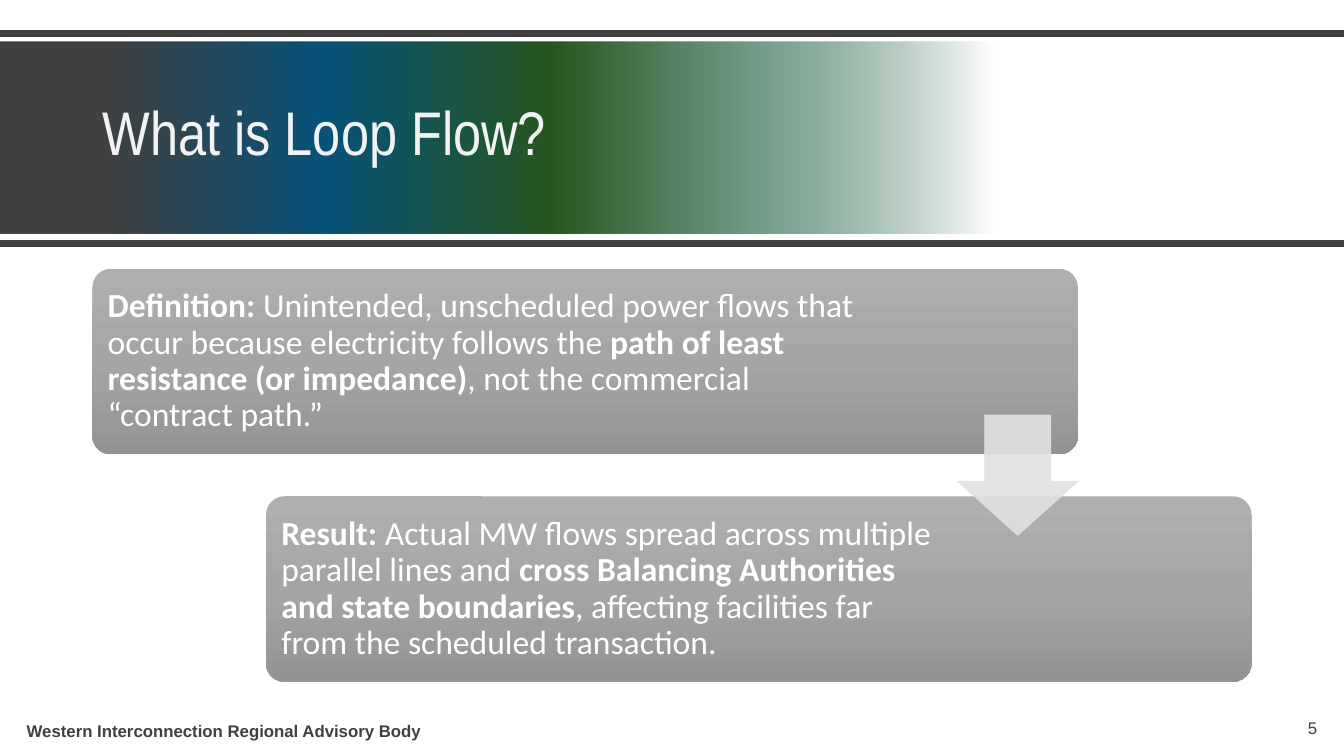
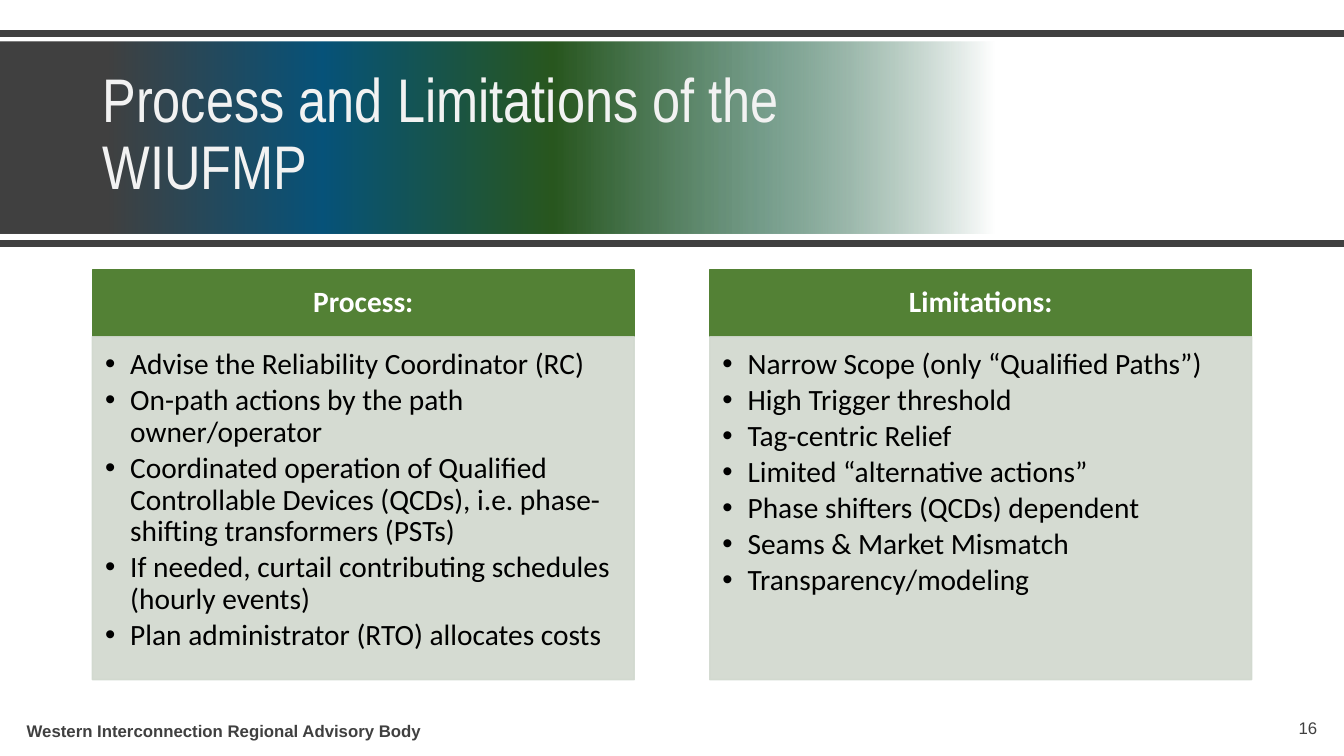
from lxml.etree import SubElement as Sub
from pptx import Presentation
from pptx.dml.color import RGBColor as RGB
from pptx.enum.shapes import MSO_CONNECTOR as Link, MSO_SHAPE as Form
from pptx.enum.text import MSO_ANCHOR as Anchor, PP_ALIGN as Align
from pptx.oxml.ns import qn
from pptx.util import Pt

COLORS = {
    "dark": "404040", "blue": "065279", "forest": "28561E", "sage": "3B735A",
    "white": "FFFFFF", "title": "F2F2F2", "black": "000000",
    "light": "AFAFAF", "mid": "A5A5A5", "deep": "939393", "arrow": "E1E1E1",
    "head": "538135", "panel": "D1D8CE",
}
WIDTH, HEIGHT, EDGE = 960, 540, 66
BAND = [(8, "dark", 100), (24, "blue", 100), (41, "forest", 100),
        (57, "sage", 69), (74, "white", 95)]
CARD = [(0, "light", 100), (50, "mid", 100), (100, "deep", 100)]
FOOTER = "Western Interconnection Regional Advisory Body"


def color(name):
    return RGB.from_string(COLORS[name])


def fade(shape, alpha):
    """Make the plain fill and line colours see-through, alpha in percent."""
    for node in shape.element.spPr.iter(qn("a:srgbClr")):
        Sub(node, qn("a:alpha")).set("val", str(alpha * 1000))


def blend(shape, stops, angle):
    """Fill with a gradient; stops are (place, colour, alpha) in percent."""
    shape.fill.gradient()
    grad = shape.element.spPr.find(qn("a:gradFill"))
    grad.find(qn("a:lin")).set("ang", str(angle * 60000))
    places = grad.find(qn("a:gsLst"))
    for old in list(places):
        places.remove(old)
    for place, name, alpha in stops:
        stop = Sub(places, qn("a:gs"))
        stop.set("pos", str(place * 1000))
        tint = Sub(stop, qn("a:srgbClr"))
        tint.set("val", COLORS[name])
        if alpha < 100:
            Sub(tint, qn("a:alpha")).set("val", str(alpha * 1000))


def add_form(slide, form, box, fill=None, line=None):
    shape = slide.shapes.add_shape(form, *map(Pt, box))
    shape.shadow.inherit = False
    if fill:
        shape.fill.solid()
        shape.fill.fore_color.rgb = color(fill)
    if line:
        shape.line.color.rgb = color(fill)
        shape.line.width = Pt(line)
    else:
        shape.line.fill.background()
    return shape


def add_rule(slide, y):
    rule = slide.shapes.add_connector(Link.STRAIGHT, 0, Pt(y), Pt(WIDTH), Pt(y))
    rule.line.color.rgb = color("dark")
    rule.line.width = Pt(4.5)
    Sub(rule.element.spPr, qn("a:effectLst"))
    return rule


def style(run, size, name, font, bold=False):
    run.font.size, run.font.name, run.font.bold = Pt(size), font, bold
    run.font.color.rgb = color(name)


def set_frame(frame, anchor, left, top, right, bottom):
    frame.word_wrap = True
    frame.vertical_anchor = anchor
    frame.margin_left, frame.margin_top = Pt(left), Pt(top)
    frame.margin_right, frame.margin_bottom = Pt(right), Pt(bottom)


def add_note(slide, text, box, align, bold):
    frame = slide.shapes.add_textbox(*map(Pt, box)).text_frame
    frame.word_wrap = True
    frame.text = text
    para = frame.paragraphs[0]
    para.alignment = align
    style(para.runs[0], 12, "dark", "Arial", bold)


def add_bands(slide, layout):
    """Draw the title band and its rules, then hand them to the layout."""
    band = add_form(slide, Form.RECTANGLE, (0, 30, WIDTH, 137))
    blend(band, BAND, 0)
    parts = [band] + [add_rule(slide, y) for y in (24, 174)]
    for spot, part in enumerate(parts, 2):
        layout.shapes.element.insert(spot, part.element)


def add_page(deck, layout, title, number):
    slide = deck.slides.add_slide(layout)
    head = slide.shapes.title
    head.left, head.top, head.width, head.height = map(Pt, (EDGE, 42, 580, 110))
    head.text_frame.text = title
    head.text_frame.vertical_anchor = Anchor.MIDDLE
    para = head.text_frame.paragraphs[0]
    para.alignment, para.line_spacing = Align.LEFT, 0.9
    style(para.runs[0], 44, "title", "Arial Narrow")
    add_note(slide, FOOTER, (12, 511, 324, 22), Align.LEFT, True)
    add_note(slide, str(number), (732, 509, 216, 22), Align.RIGHT, False)
    return slide


def add_card(slide, box, right, parts):
    """Add a card whose text parts are in turn bold and plain."""
    card = add_form(slide, Form.ROUNDED_RECTANGLE, box)
    card.adjustments[0] = 0.1
    blend(card, CARD, 90)
    set_frame(card.text_frame, Anchor.MIDDLE, 7.2, 7.2, right, 7.2)
    para = card.text_frame.paragraphs[0]
    para.alignment, para.line_spacing = Align.LEFT, 0.9
    for i, part in enumerate(parts):
        run = para.add_run()
        run.text = part
        style(run, 24, "white", "Calibri", i % 2 == 0)


def add_arrow(slide, box):
    arrow = add_form(slide, Form.DOWN_ARROW, box, "arrow", 0.5)
    arrow.adjustments[0], arrow.adjustments[1] = 0.55, 0.45
    fade(arrow, 90)


def add_bullet(para):
    props = para._p.get_or_add_pPr()
    props.set("marL", str(Pt(18)))
    props.set("indent", str(Pt(-18)))
    Sub(props, qn("a:buFont")).set("typeface", "Arial")
    Sub(props, qn("a:buChar")).set("char", "•")


def add_panel(slide, left, width, title, items):
    top, tall = 193, 47.5
    head = add_form(slide, Form.RECTANGLE, (left, top, width, tall), "head", 1)
    set_frame(head.text_frame, Anchor.MIDDLE, 12, 6, 12, 6)
    head.text_frame.text = title
    para = head.text_frame.paragraphs[0]
    para.alignment, para.line_spacing = Align.CENTER, 0.9
    style(para.runs[0], 21, "white", "Calibri", True)

    body = add_form(slide, Form.RECTANGLE, (left, top + tall, width, 245), "panel", 1)
    fade(body, 90)
    set_frame(body.text_frame, Anchor.TOP, 9, 9, 12, 13)
    body.text_frame.text = "\n".join(items)
    for para in body.text_frame.paragraphs:
        add_bullet(para)
        para.alignment, para.line_spacing = Align.LEFT, 0.9
        para.space_after = Pt(3)
        style(para.runs[0], 21, "black", "Calibri")


def fill_flow(slide):
    wide, tall, top, gap, side = 704, 132.5, 192, 30, 86
    add_card(slide, (EDGE, top, wide, tall), 137, [
        "Definition: ",
        "Unintended, unscheduled power flows that occur because electricity follows the ",
        "path of least resistance (or impedance)",
        ", not the commercial “contract path.”"])
    add_card(slide, (WIDTH - EDGE - wide, top + tall + gap, wide, tall), 217, [
        "Result:",
        " Actual MW flows spread across multiple parallel lines and ",
        "cross Balancing Authorities and state boundaries",
        ", affecting facilities far from the scheduled transaction."])
    middle = top + tall + gap / 2
    add_arrow(slide, (EDGE + wide - side, middle - side / 2, side, side))


def fill_limits(slide):
    wide = 387
    add_panel(slide, EDGE, wide, "Process:", [
        "Advise the Reliability Coordinator (RC)",
        "On-path actions by the path owner/operator",
        "Coordinated operation of Qualified Controllable Devices (QCDs), "
        "i.e. phase-shifting transformers (PSTs)",
        "If needed, curtail contributing schedules (hourly events)",
        "Plan administrator (RTO) allocates costs"])
    add_panel(slide, WIDTH - EDGE - wide, wide, "Limitations:", [
        "Narrow Scope (only “Qualified Paths”)",
        "High Trigger threshold",
        "Tag-centric Relief",
        "Limited “alternative actions”",
        "Phase shifters (QCDs) dependent",
        "Seams & Market Mismatch",
        "Transparency/modeling"])


def main():
    deck = Presentation()
    deck.slide_width, deck.slide_height = Pt(WIDTH), Pt(HEIGHT)
    layout = deck.slide_layouts.get_by_name("Title Only")
    flow = add_page(deck, layout, "What is Loop Flow?", 5)
    add_bands(flow, layout)
    fill_flow(flow)
    fill_limits(add_page(deck, layout, "Process and Limitations of the WIUFMP", 16))
    deck.save("out.pptx")


if __name__ == "__main__":
    main()
